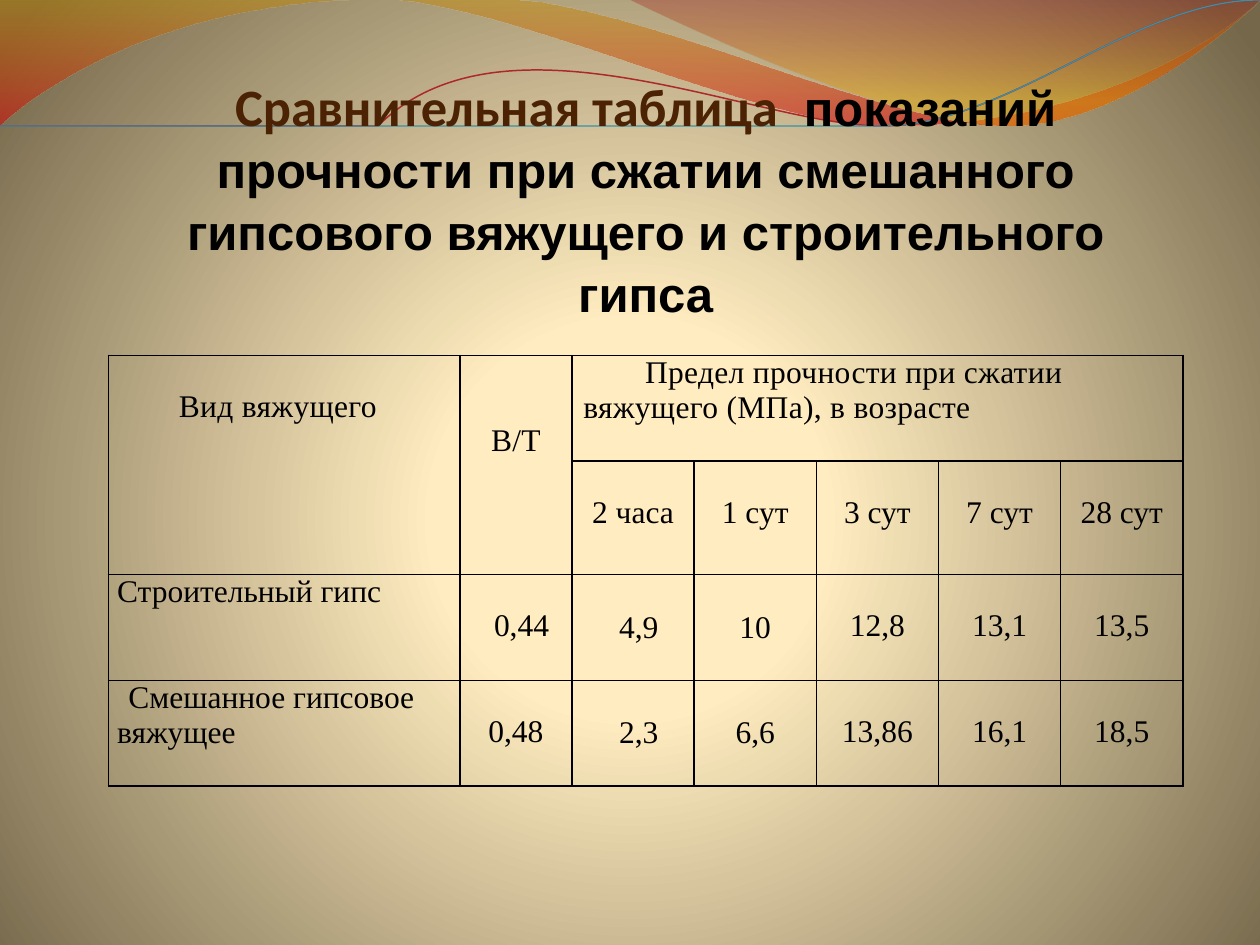
import dataclasses
import typing

import lxml.etree
import pptx
import pptx.dml.color
import pptx.enum.text
import pptx.oxml
import pptx.oxml.ns
import pptx.util

Inches = pptx.util.Inches
Pt = pptx.util.Pt
qn = pptx.oxml.ns.qn
ALIGN = pptx.enum.text.PP_ALIGN
ANCHOR = pptx.enum.text.MSO_ANCHOR
NAMESPACE = pptx.oxml.ns.nsdecls("a")
BLACK = "000000"
LINE_HEIGHT = 0.27


class Stop(typing.NamedTuple):
    position: int
    color: str
    alpha: int = 100


class Point(typing.NamedTuple):
    x: float
    y: float


@dataclasses.dataclass
class Wave:
    start: Point
    segments: list[list[Point]]
    stops: list[Stop] = dataclasses.field(default_factory=list)
    line_color: str = ""
    line_width: float = 0


@dataclasses.dataclass
class Entry:
    text: str
    lead_lines: int = 1
    align: typing.Any = ALIGN.CENTER
    anchor: typing.Any = ANCHOR.TOP
    margin: float = 0
    indent: float = 0
    spacing: float = 0
    span: tuple[int, int] = (1, 1)


def rgb(color: str) -> pptx.dml.color.RGBColor:
    return pptx.dml.color.RGBColor.from_string(color)


def apply_format(target: typing.Any, values: dict[str, typing.Any]) -> None:
    for name, value in values.items():
        setattr(target, name, value)


def set_gradient(fill: typing.Any, stops: list[Stop], direction: str) -> None:
    fill.solid()
    holder = fill._xPr
    stop_xml = "".join(
        f'<a:gs pos="{stop.position * 1000}"><a:srgbClr val="{stop.color}">'
        f'<a:alpha val="{stop.alpha * 1000}"/></a:srgbClr></a:gs>'
        for stop in stops
    )
    gradient = pptx.oxml.parse_xml(
        f'<a:gradFill {NAMESPACE} rotWithShape="1"><a:gsLst>{stop_xml}</a:gsLst>{direction}</a:gradFill>'
    )
    holder.replace(holder.find(qn("a:solidFill")), gradient)


def curve(*coordinates: float) -> list[Point]:
    return [Point(*pair) for pair in zip(coordinates[::2], coordinates[1::2])]


def draw_wave(slide: typing.Any, wave: Wave) -> None:
    builder = slide.shapes.build_freeform(*wave.start, scale=float(Inches(1)))
    points = [point for segment in wave.segments for point in segment]
    builder.add_line_segments(points, close=bool(wave.stops))
    shape = builder.convert_to_shape()
    shape.shadow.inherit = False
    steps = iter(list(shape._element.iter(qn("a:lnTo"))))
    for segment in wave.segments:
        first, *others = [next(steps) for _ in segment]
        if others:
            first.tag = qn("a:cubicBezTo")
        for other in others:
            first.append(other[0])
            other.getparent().remove(other)
    if wave.stops:
        set_gradient(shape.fill, wave.stops, '<a:lin ang="5400000" scaled="0"/>')
        shape.line.fill.background()
    else:
        shape.fill.background()
        shape.line.color.rgb = rgb(wave.line_color)
        shape.line.width = Pt(wave.line_width)


def add_run(paragraph: typing.Any, text: str, color: str, font: dict[str, typing.Any]) -> typing.Any:
    run = paragraph.add_run()
    run.text = text
    apply_format(run.font, font)
    run.font.color.rgb = rgb(color)
    return run


def draw_title(slide: typing.Any) -> None:
    title = slide.shapes.title
    slide.shapes._spTree.append(title._element)
    apply_format(title, {"left": Inches(0.91), "top": 0, "width": Inches(8.43), "height": Inches(3)})
    apply_format(title.text_frame, {
        "word_wrap": True,
        "auto_size": pptx.enum.text.MSO_AUTO_SIZE.NONE,
        "vertical_anchor": ANCHOR.TOP,
        "margin_top": Inches(0.56),
    })
    heading = title.text_frame.paragraphs[0]
    apply_format(heading, {"alignment": ALIGN.CENTER, "line_spacing": 1.05})
    add_run(heading, "Сравнительная таблица ", "4B2203", {"name": "Calibri", "size": Pt(30), "bold": True})
    add_run(
        heading,
        " показаний прочности при сжатии смешанного гипсового вяжущего и строительного гипса",
        BLACK,
        {"name": "Arial", "size": Pt(28), "bold": True},
    )


def draw_borders(cell: typing.Any) -> None:
    properties = cell._tc.get_or_add_tcPr()
    for position, side in enumerate(("lnL", "lnR", "lnT", "lnB")):
        border = lxml.etree.Element(qn(f"a:{side}"), w=str(Pt(1)))
        fill = lxml.etree.SubElement(border, qn("a:solidFill"))
        lxml.etree.SubElement(fill, qn("a:srgbClr"), val=BLACK)
        properties.insert(position, border)


def fill_entry(cell: typing.Any, entry: Entry) -> None:
    apply_format(cell, {
        "margin_left": Inches(0.07),
        "margin_right": Inches(0.07),
        "margin_top": Inches(entry.lead_lines * LINE_HEIGHT),
        "margin_bottom": 0,
        "vertical_anchor": entry.anchor,
    })
    paragraph = cell.text_frame.paragraphs[0]
    paragraph.alignment = entry.align
    properties = paragraph._p.get_or_add_pPr()
    properties.set("marL", str(Inches(entry.margin)))
    properties.set("indent", str(Inches(entry.indent)))
    run = add_run(paragraph, entry.text, BLACK, {"name": "Times New Roman", "size": Pt(18)})
    run.font._element.set("spc", str(int(entry.spacing * 100)))


def draw_table(slide: typing.Any, widths: list[float], heights: list[float],
               entries: dict[tuple[int, int], Entry]) -> None:
    table = slide.shapes.add_table(
        len(heights), len(widths), Inches(0.86), Inches(2.82), Inches(sum(widths)), Inches(sum(heights))
    ).table
    apply_format(table, {"first_row": False, "horz_banding": False})
    for column, width in zip(table.columns, widths):
        column.width = Inches(width)
    for row, height in zip(table.rows, heights):
        row.height = Inches(height)
    for cell in table.iter_cells():
        cell.fill.background()
        draw_borders(cell)
    for (row, column), entry in entries.items():
        cell = table.cell(row, column)
        if entry.span != (1, 1):
            cell.merge(table.cell(row + entry.span[0] - 1, column + entry.span[1] - 1))
        fill_entry(cell, entry)


WAVES = [
    Wave(Point(0, 0), [
        curve(4.4, -0.01), curve(4.76, 0.17, 6.64, 0.63, 7.58, 0.63),
        curve(8.53, 0.63, 9.58, 0.26, 10, 0.09), curve(10.01, 0.36),
        curve(9.83, 0.44, 8.7, 0.76, 7.46, 0.75), curve(6.22, 0.75, 3.82, 0.28, 2.57, 0.34),
        curve(1.29, 0.36, 0.46, 0.83, -0.01, 1.13),
    ], [Stop(0, "C38B00", 45), Stop(100, "D60305", 55)]),
    Wave(Point(4.79, -0.01), [
        curve(5.09, 0.11, 6.82, 0.62, 7.69, 0.65), curve(8.56, 0.69, 9.61, 0.32, 10, 0.21), curve(10, 0),
    ], [Stop(0, "A11112", 30), Stop(80, "E9A600", 45)]),
    Wave(Point(0, 1.11), [
        curve(0.48, 0.93, 1.58, 0.57, 2.77, 0.52), curve(3.95, 0.47, 5.93, 0.89, 7.13, 0.8),
        curve(8.33, 0.71, 9.38, 0.15, 9.98, -0.02),
    ], line_color="AC2829", line_width=0.85),
    Wave(Point(0, 1.04), [
        curve(0.47, 0.96, 1.64, 0.61, 2.83, 0.56), curve(4.03, 0.51, 5.97, 0.84, 7.17, 0.75),
        curve(8.36, 0.67, 9.41, 0.21, 10, 0.06),
    ], line_color="3891A7", line_width=0.75),
]

AGES = ["2 часа", "1 сут", "3 сут", "7 сут", "28 сут"]
STRENGTHS = [["4,9", "10", "12,8", "13,1", "13,5"], ["2,3", "6,6", "13,86", "16,1", "18,5"]]
ENTRIES = {
    (0, 0): Entry("Вид вяжущего", align=ALIGN.LEFT, indent=0.49, spacing=0.2, span=(2, 1)),
    (0, 1): Entry("В/Т", lead_lines=2, margin=0.02, indent=-0.02, spacing=0.2, span=(2, 1)),
    (0, 2): Entry("Предел прочности при сжатии вяжущего (МПа), в возрасте", lead_lines=0,
                  align=ALIGN.LEFT, margin=0.02, indent=0.49, spacing=0.2, span=(1, 5)),
    (2, 0): Entry("Строительный гипс", lead_lines=0, align=ALIGN.LEFT),
    (2, 1): Entry("0,44", indent=0.09),
    (3, 0): Entry("Смешанное гипсовое вяжущее", lead_lines=0, align=ALIGN.LEFT, indent=0.09),
    (3, 1): Entry("0,48"),
}
ENTRIES |= {(1, column): Entry(age) for column, age in enumerate(AGES, 2)}
for binder_row, strengths in enumerate(STRENGTHS, 2):
    for age_column, strength in enumerate(strengths, 2):
        early = age_column < 4
        ENTRIES[binder_row, age_column] = Entry(
            strength,
            lead_lines=0 if early else 1,
            anchor=ANCHOR.MIDDLE if early else ANCHOR.TOP,
            indent=0.09 if age_column == 2 else 0,
        )


def main() -> None:
    deck = pptx.Presentation()
    apply_format(deck, {"slide_width": Inches(10), "slide_height": Inches(7.5)})
    slide = deck.slides.add_slide(deck.slide_layouts[5])
    set_gradient(
        slide.background.fill,
        [Stop(0, "FFECC2"), Stop(25, "FFECC0"), Stop(100, "74674A")],
        '<a:path path="circle"><a:fillToRect l="10000" t="110000" r="10000" b="100000"/></a:path>',
    )
    for wave in WAVES:
        draw_wave(slide, wave)
    draw_title(slide)
    draw_table(slide, [2.79, 0.89] + [0.97] * len(AGES), [0.84, 0.9, 0.84, 0.84], ENTRIES)
    deck.save("out.pptx")


if __name__ == "__main__":
    main()
